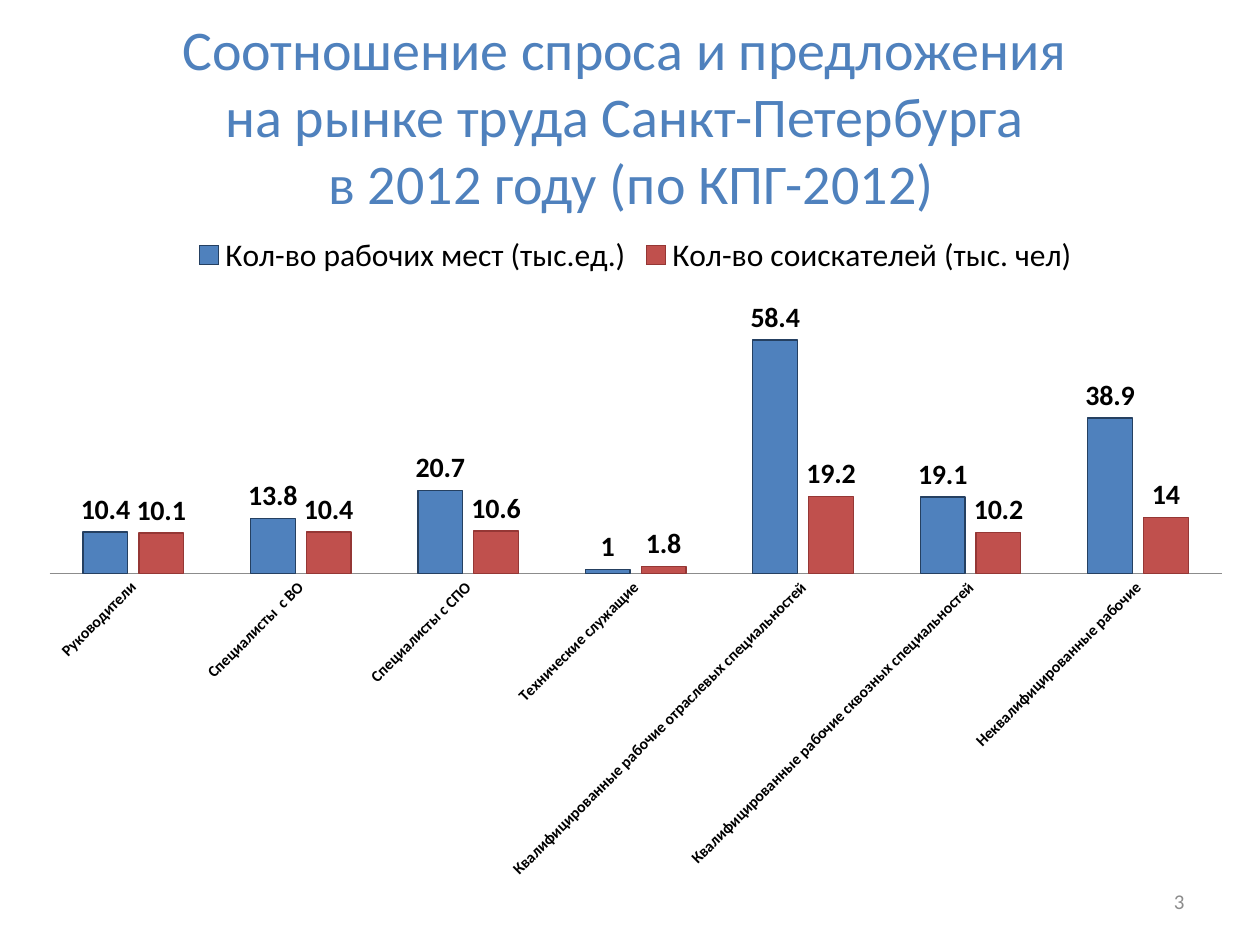
from dataclasses import dataclass

from pptx import Presentation
from pptx.chart.data import CategoryChartData
from pptx.dml.color import RGBColor
from pptx.enum.chart import XL_CHART_TYPE, XL_LABEL_POSITION, XL_LEGEND_POSITION, XL_TICK_MARK
from pptx.enum.text import MSO_ANCHOR, PP_ALIGN
from pptx.oxml.ns import qn
from pptx.util import Inches, Pt

FONT = "Calibri"
COLORS = {
    "title": "4F81BD", "text": "000000", "number": "8C8C8C", "axis": "8C8C8C",
    "jobs": "4F81BD", "jobs_line": "254061",
    "seekers": "C0504D", "seekers_line": "953735",
}
CATEGORIES = [
    "Руководители", "Специалисты  с ВО", "Специалисты с СПО", "Технические служащие",
    "Квалифицированные рабочие отраслевых специальностей",
    "Квалифицированные рабочие сквозных специальностей",
    "Неквалифицированные рабочие",
]


@dataclass
class Series:
    name: str
    values: list[float]
    color: str


@dataclass
class Label:
    lines: list[str]
    box: tuple[float, float, float, float]
    size: int
    color: str
    align: PP_ALIGN


SERIES = [
    Series("Кол-во рабочих мест (тыс.ед.)", [10.4, 13.8, 20.7, 1, 58.4, 19.1, 38.9], "jobs"),
    Series("Кол-во соискателей (тыс. чел)", [10.1, 10.4, 10.6, 1.8, 19.2, 10.2, 14], "seekers"),
]
LABELS = [
    Label(["Соотношение спроса и предложения ", "на рынке труда Санкт-Петербурга ",
           "в 2012 году (по КПГ-2012)"], (0.51, 0.6, 9, 0.63), 32, "title", PP_ALIGN.CENTER),
    Label(["3"], (7.17, 6.95, 2.33, 0.4), 12, "number", PP_ALIGN.RIGHT),
]


def rgb(name: str) -> RGBColor:
    return RGBColor.from_string(COLORS[name])


def set_font(font, size: int, color: str, bold: bool = False) -> None:
    font.name, font.size, font.bold = FONT, Pt(size), bold
    font.color.rgb = rgb(color)


def add_label(s, label: Label) -> None:
    tf = s.shapes.add_textbox(*map(Inches, label.box)).text_frame
    tf.word_wrap = True
    tf.vertical_anchor = MSO_ANCHOR.MIDDLE
    p = tf.paragraphs[0]
    p.alignment = label.align
    for i, line in enumerate(label.lines):
        if i:
            p.add_line_break()
        r = p.add_run()
        r.text = line
        set_font(r.font, label.size, label.color)


def add_labor_chart(s) -> None:
    data = CategoryChartData()
    data.categories = CATEGORIES
    for series in SERIES:
        data.add_series(series.name, series.values)
    box = map(Inches, (0.2, 1.75, 9.69, 5.33))
    chart = s.shapes.add_chart(XL_CHART_TYPE.COLUMN_CLUSTERED, *box, data).chart
    set_font(chart.font, 18, "text")
    chart.has_title = False
    chart.has_legend = True
    chart.legend.position = XL_LEGEND_POSITION.TOP
    chart.legend.include_in_layout = False
    set_font(chart.legend.font, 18, "text")

    value_axis = chart.value_axis
    value_axis.visible = value_axis.has_major_gridlines = False
    axis = chart.category_axis
    axis.major_tick_mark = XL_TICK_MARK.NONE
    axis.format.line.color.rgb = rgb("axis")
    set_font(axis.tick_labels.font, 9, "text", True)
    axis._element.find(qn("c:txPr")).find(qn("a:bodyPr")).set("rot", "-2700000")

    plot = chart.plots[0]
    plot.gap_width, plot.overlap, plot.vary_by_categories = 150, -25, False
    for series, bars in zip(SERIES, plot.series):
        bars.format.fill.solid()
        bars.format.fill.fore_color.rgb = rgb(series.color)
        bars.format.line.color.rgb = rgb(f"{series.color}_line")
        bars.format.line.width = Pt(0.75)
        labels = bars.data_labels
        labels.show_value = True
        labels.position = XL_LABEL_POSITION.OUTSIDE_END
        set_font(labels.font, 16, "text", True)


def main() -> None:
    """Build the labour market slide and save it."""
    prs = Presentation()
    prs.slide_width, prs.slide_height = Inches(10), Inches(7.5)
    s = prs.slides.add_slide(prs.slide_layouts[6])
    add_labor_chart(s)
    for label in LABELS:
        add_label(s, label)
    prs.save("out.pptx")


if __name__ == "__main__":
    main()
